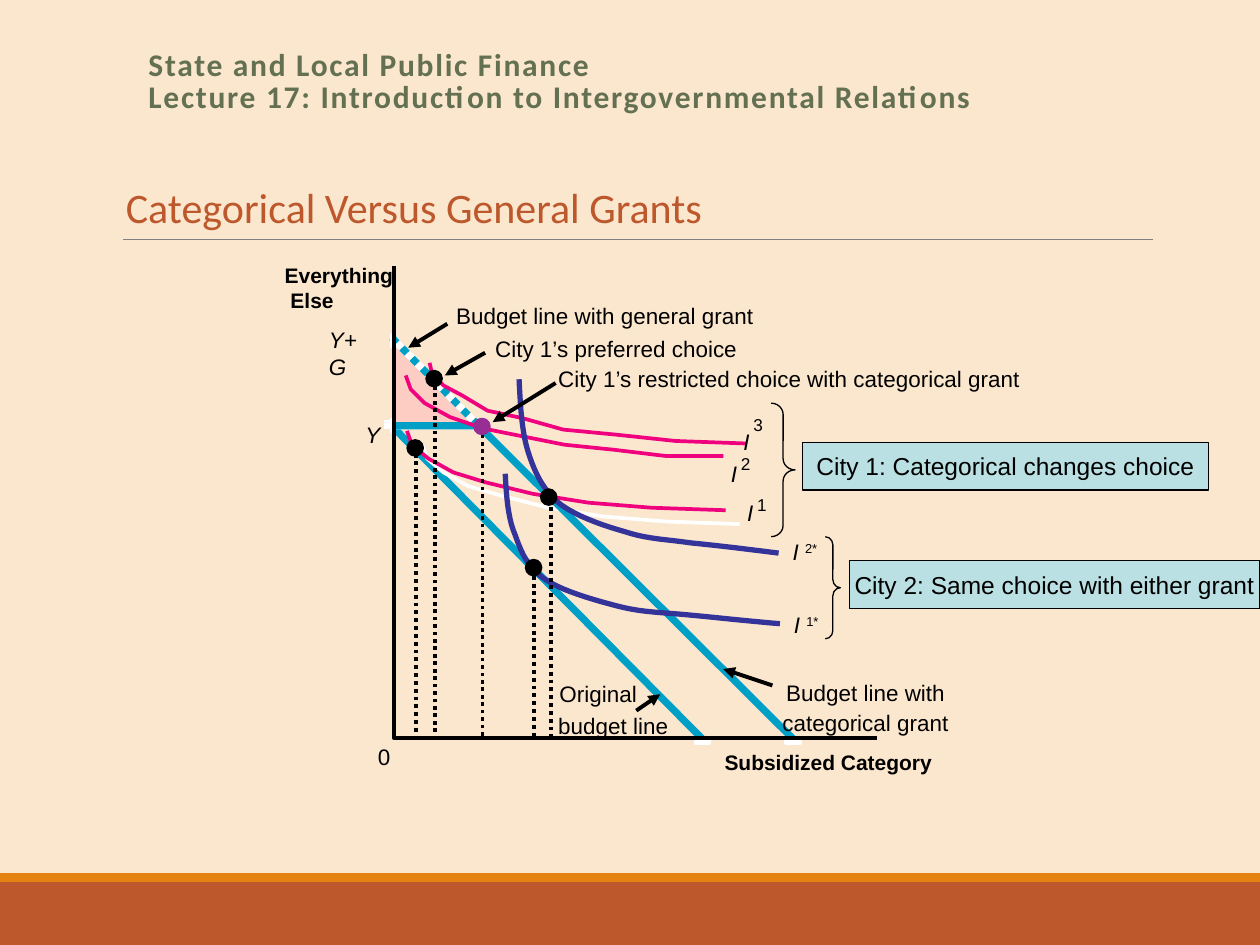
from lxml.etree import SubElement
from pptx import Presentation
from pptx.dml.color import RGBColor
from pptx.enum.dml import MSO_LINE
from pptx.enum.shapes import MSO_CONNECTOR, MSO_SHAPE
from pptx.enum.text import MSO_ANCHOR, MSO_AUTO_SIZE, PP_ALIGN
from pptx.oxml.ns import qn
from pptx.util import Cm, Pt

COLORS = {
    "paper": "FBE6CE", "rust": "BD582C", "orange": "E48312", "rule": "808080",
    "olive": "637052", "black": "000000", "white": "FFFFFF", "budget": "00A0C6",
    "city1": "F0027F", "city2": "333399", "gain": "FDCDC3",
    "restricted": "982E93", "box": "BBE0E3",
}


def inch(value):
    return Cm(value * 2.54)


def rgb(name):
    return RGBColor.from_string(COLORS[name])


def bezier_points(start, *segments, steps=10):
    """Sample joined cubic segments, each (control, control, end)."""
    points = [start]
    for a, b, end in segments:
        origin = points[-1]
        for t in (step / steps for step in range(1, steps + 1)):
            weights = ((1 - t) ** 3, 3 * t * (1 - t) ** 2, 3 * t * t * (1 - t), t ** 3)
            points.append(tuple(
                sum(w * p[axis] for w, p in zip(weights, (origin, a, b, end)))
                for axis in (0, 1)))
    return points


class Diagram:
    """Draws on one slide; positions are in inches, line widths in points."""

    font = "Arial"
    size = 12.8
    stroke = 2.13

    def __init__(self, slide):
        self.slide = slide
        self.shapes = slide.shapes
        slide.background.fill.solid()
        slide.background.fill.fore_color.rgb = rgb("paper")

    def paint(self, shape, fill, line, width):
        shape.shadow.inherit = False
        for part, color in ((shape.fill, fill), (shape.line.fill, line)):
            if color:
                part.solid()
                part.fore_color.rgb = rgb(color)
            else:
                part.background()
        if line:
            shape.line.width = Pt(width)
        return shape

    def shape(self, kind, x, y, w, h, fill=None, line=None, width=stroke):
        shape = self.shapes.add_shape(kind, inch(x), inch(y), inch(w), inch(h))
        return self.paint(shape, fill, line, width)

    def rect(self, *args, **style):
        return self.shape(MSO_SHAPE.RECTANGLE, *args, **style)

    def dot(self, x, y, color="black"):
        self.shape(MSO_SHAPE.OVAL, x, y, 0.11, 0.11, color, color)

    def brace(self, x, y, w, h, curl):
        brace = self.shape(MSO_SHAPE.RIGHT_BRACE, x, y, w, h, None, "black", 0.75)
        brace.adjustments[0] = curl

    def outline(self, points, line=None, width=stroke, fill=None):
        (x, y), *rest = [(inch(px), inch(py)) for px, py in points]
        builder = self.shapes.build_freeform(x, y)
        builder.add_line_segments(rest, close=bool(fill))
        self.paint(builder.convert_to_shape(), fill, line, width)

    def line(self, start, end, color="black", width=2.25, dotted=False, arrow=False):
        line = self.shapes.add_connector(
            MSO_CONNECTOR.STRAIGHT, *map(inch, start + end))
        line.line.color.rgb = rgb(color)
        line.line.width = Pt(width)
        if dotted:
            line.line.dash_style = MSO_LINE.ROUND_DOT
        if arrow:
            outline = line._element.spPr.find(qn("a:ln"))
            SubElement(outline, qn("a:tailEnd"), type="triangle")
        SubElement(line._element.spPr, qn("a:effectLst"))

    def fill_paragraph(self, paragraph, text, color="black", size=size, font=font,
                       bold=False, italic=False):
        paragraph.text = text
        paragraph.font.name = font
        paragraph.font.size = Pt(size)
        paragraph.font.bold = bold
        paragraph.font.italic = italic
        paragraph.font.color.rgb = rgb(color)

    def text(self, x, y, w, text, h=0.21, inset=0, **style):
        box = self.shapes.add_textbox(inch(x), inch(y), inch(w), inch(h))
        frame = box.text_frame
        frame.word_wrap = False
        frame.auto_size = MSO_AUTO_SIZE.SHAPE_TO_FIT_TEXT
        frame.margin_left = frame.margin_right = inch(inset)
        frame.margin_top = frame.margin_bottom = inch(inset / 2)
        self.fill_paragraph(frame.paragraphs[0], text, **style)
        return frame

    def starred_curve_label(self, x, y, number):
        paragraph = self.text(x, y, 0.21, "I ", italic=True).paragraphs[0]
        star = paragraph.add_run()
        star.text = number + "*"
        star.font.italic = False
        star._r.get_or_add_rPr().set("baseline", "30000")

    def callout(self, x, y, w, text):
        frame = self.rect(x, y, w, 0.38, fill="box", line="black", width=0.75).text_frame
        frame.word_wrap = False
        frame.vertical_anchor = MSO_ANCHOR.MIDDLE
        self.fill_paragraph(frame.paragraphs[0], text, size=14)
        frame.paragraphs[0].alignment = PP_ALIGN.CENTER


def draw_headings(d):
    d.rect(0, 7, 10, 0.5, fill="rust")
    d.rect(0, 6.93, 10, 0.07, fill="orange")
    d.line((0.98, 1.9), (9.15, 1.9), "rule", 0.5)
    course = d.text(
        1.08, 0.33, 8.25,
        "State and Local Public Finance\n"
        "Lecture 17: Introduction to Intergovernmental Relations",
        h=0.65, inset=0.1, color="olive", size=18, font="Calibri", bold=True)
    course.auto_size = MSO_AUTO_SIZE.NONE
    course.word_wrap = True
    course.vertical_anchor = MSO_ANCHOR.MIDDLE
    course.paragraphs[0].line_spacing = 0.85
    for run in course.paragraphs[0].runs:
        run._r.get_or_add_rPr().set("spc", "100")
    d.text(0.9, 1.39, 4.82, "Categorical Versus General Grants", h=0.5, inset=0.1,
           color="rust", size=24, font="Calibri")


def draw_curves(d):
    d.outline([(3.13, 3.4), (3.83, 3.4), (3.13, 2.72)], fill="gain")
    for color, dotted in (("white", False), ("budget", True)):
        d.line((3.11, 2.68), (3.8, 3.38), color, 4.13, dotted)
    for color in ("white", "budget"):
        d.line((3.09, 3.36), (5.57, 5.86), color, 4.13)
    for y in (3.33, 2.66):
        d.rect(3.11, y, 0.02, 0.09, fill="white", line="white")
    d.outline([(3.35, 3.53), (3.39, 3.64), (3.52, 3.75), (3.72, 3.86), (4, 3.94),
               (4.35, 4.03), (4.79, 4.1), (5.29, 4.14), (5.87, 4.16)], "white")
    d.outline([(3.41, 2.88), (3.43, 2.97), (3.52, 3.06), (3.67, 3.14), (3.87, 3.26),
               (4.15, 3.32), (4.47, 3.41), (4.89, 3.45), (5.36, 3.5), (5.92, 3.52)],
              "city1")
    d.dot(3.39, 2.95)
    for color in ("white", "budget"):
        d.outline([(6.29, 5.86), (3.8, 3.38), (3.11, 3.38)], color, 4.13)
    d.outline([(3.23, 3.42), (3.27, 3.53), (3.4, 3.64), (3.6, 3.75), (3.86, 3.83),
               (4.23, 3.92), (4.67, 3.99), (5.17, 4.03), (5.76, 4.05)], "city1")
    d.dot(3.24, 3.5)
    for x in (5.52, 6.24):
        d.rect(x, 5.86, 0.11, 0.04, fill="white", line="white")
    d.outline([(6.96, 5.86), (3.13, 5.86), (3.13, 2.11)], "black")
    d.line((3.83, 5.84), (3.83, 3.44), width=d.stroke, dotted=True)
    d.rect(3.05, 3.34, 0.06, 0.06, fill="white", line="white", width=0.75)
    d.outline([(3.22, 2.98), (3.26, 3.09), (3.37, 3.2), (3.57, 3.31), (3.83, 3.4),
               (4.13, 3.46), (4.48, 3.53), (4.87, 3.57), (5.29, 3.62), (5.74, 3.62)],
              "city1")
    d.dot(3.77, 3.33, "restricted")
    d.outline(bezier_points(
        (4.01, 3.76), ((4.02, 3.94), (4.03, 4.11), (4.09, 4.25)),
        ((4.14, 4.39), (4.19, 4.51), (4.33, 4.6)),
        ((4.46, 4.69), (4.71, 4.76), (4.9, 4.81)),
        ((5.09, 4.86), (5.25, 4.86), (5.46, 4.88)),
        ((5.68, 4.9), (5.94, 4.93), (6.19, 4.95))), "city2", 3)
    d.outline(bezier_points(
        (4.12, 3.01), ((4.13, 3.21), (4.14, 3.42), (4.19, 3.58)),
        ((4.24, 3.74), (4.3, 3.87), (4.42, 3.98)),
        ((4.55, 4.09), (4.78, 4.17), (4.96, 4.22)),
        ((5.14, 4.28), (5.29, 4.28), (5.49, 4.31)),
        ((5.7, 4.33), (5.94, 4.36), (6.18, 4.39))), "city2", 3)
    for x, top, bottom in ((4.24, 4.57, 5.87), (4.37, 3.9, 5.84), (3.3, 3.6, 5.82)):
        d.line((x, top), (x, bottom), dotted=True)
    d.dot(4.18, 4.45)
    d.dot(4.3, 3.89)
    d.line((3.45, 5.81), (3.45, 3.04), width=d.stroke, dotted=True)


def draw_labels(d):
    d.text(2.26, 2.08, 0.87, "Everything\n Else", h=0.4, size=12, bold=True)
    d.text(5.75, 5.95, 1.71, "Subsidized Category", size=12, bold=True)
    d.text(2.61, 2.59, 0.36, "Y+G", italic=True)
    d.text(2.9, 3.34, 0.12, "Y", italic=True)
    for x, y, w, label in (
            (3, 5.9, 0.1, "0"),
            (6.24, 5.39, 1.27, "Budget line with"),
            (6.21, 5.63, 1.33, "categorical grant"),
            (3.62, 2.4, 2.37, "Budget line with general grant"),
            (4.44, 5.4, 0.62, "Original"),
            (4.43, 5.65, 0.88, "budget line"),
            (3.93, 2.66, 1.93, "City 1’s preferred choice"),
            (4.43, 2.9, 3.68, "City 1’s restricted choice with categorical grant")):
        d.text(x, y, w, label)
    for x, y, number, number_y in (
            (5.93, 3.96, "1", 3.92), (5.8, 3.65, "2", 3.6), (5.9, 3.4, "3", 3.29)):
        d.text(x, y, 0.05, "I", italic=True)
        d.text(x + 0.08, number_y, 0.08, number, h=0.16, size=9.8)
    d.starred_curve_label(6.3, 4.85, "1")
    d.starred_curve_label(6.29, 4.27, "2")
    d.brace(6.12, 3.2, 0.19, 1.06, 0.47)
    d.brace(6.55, 4.26, 0.12, 0.81, 0.54)
    d.callout(6.37, 3.51, 3.22, "City 1: Categorical changes choice")
    d.callout(6.74, 4.45, 3.26, "City 2: Same choice with either grant")
    for start, end in (((3.55, 2.57), (3.24, 2.76)), ((6.13, 5.44), (5.74, 5.31)),
                       ((5.05, 5.64), (5.24, 5.51)), ((3.85, 2.8), (3.53, 2.98)),
                       ((4.41, 3.04), (3.91, 3.35))):
        d.line(start, end, arrow=True)


def main():
    deck = Presentation()
    deck.slide_width, deck.slide_height = Cm(25.4), Cm(19.05)
    diagram = Diagram(deck.slides.add_slide(deck.slide_layouts[6]))
    draw_headings(diagram)
    draw_curves(diagram)
    draw_labels(diagram)
    deck.save("out.pptx")


if __name__ == "__main__":
    main()
